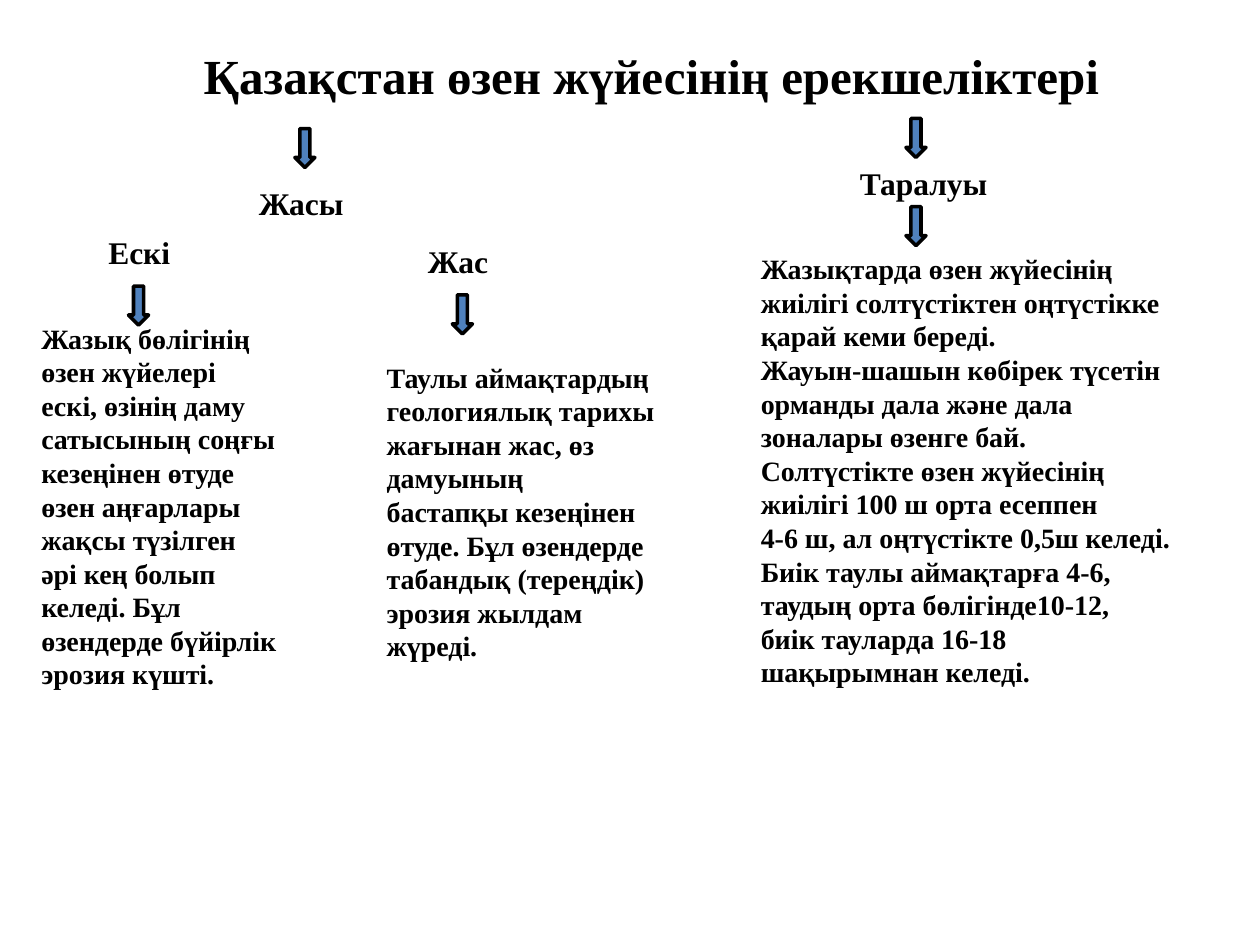
from dataclasses import dataclass

import pptx
import pptx.dml.color
import pptx.enum.shapes
import pptx.enum.text
import pptx.util
from pptx.util import Inches


@dataclass(frozen=True)
class Theme:
    font: str = "Times New Roman"
    ink: pptx.dml.color.RGBColor = pptx.dml.color.RGBColor(0, 0, 0)
    arrow_fill: pptx.dml.color.RGBColor = pptx.dml.color.RGBColor(0x4F, 0x81, 0xBD)
    title_size: int = 28
    heading_size: int = 18
    body_size: int = 16
    arrow_line: int = 2


@dataclass(frozen=True)
class Heading:
    text: str
    left: float
    top: float
    width: float
    wraps: bool = True


@dataclass(frozen=True)
class Description:
    left: float
    top: float
    width: float
    height: float
    lines: tuple[str, ...]


@dataclass(frozen=True)
class Arrow:
    left: float
    top: float


THEME = Theme()
ALIGN = pptx.enum.text.PP_ALIGN
HEADING_HEIGHT = 0.4
ARROW_WIDTH, ARROW_HEIGHT = 0.16, 0.31

HEADINGS = (
    Heading("Ескі", 0.55, 1.8, 1.11),
    Heading("Жас", 3.05, 1.87, 1.17),
    Heading("Таралуы", 6.72, 1.25, 1.22, wraps=False),
    Heading("Жасы", 1.95, 1.41, 0.88, wraps=False),
)

DESCRIPTIONS = (
    Description(0.23, 2.5, 2.34, 3.04, (
        "Жазық бөлігінің",
        "өзен жүйелері",
        "ескі, өзінің даму",
        "сатысының соңғы",
        "кезеңінен өтуде",
        "өзен аңғарлары",
        "жақсы түзілген",
        "әрі кең болып",
        "келеді. Бұл",
        "өзендерде бүйірлік",
        "эрозия күшті.",
    )),
    Description(2.97, 2.81, 2.42, 2.52, (
        "Таулы аймақтардың",
        "геологиялық тарихы жағынан жас, өз дамуының",
        "бастапқы кезеңінен",
        "өтуде. Бұл өзендерде табандық (тереңдік)",
        "эрозия жылдам",
        "жүреді.",
    )),
    Description(5.94, 1.95, 3.83, 3.6, (
        "Жазықтарда өзен жүйесінің",
        "жиілігі солтүстіктен оңтүстікке",
        "қарай кеми береді.",
        "Жауын-шашын көбірек түсетін",
        "орманды дала және дала",
        "зоналары өзенге бай.",
        "Солтүстікте өзен жүйесінің",
        "жиілігі 100 ш орта есеппен",
        "4-6 ш, ал оңтүстікте 0,5ш келеді.",
        "Биік таулы аймақтарға 4-6,",
        "таудың орта бөлігінде10-12,",
        "биік тауларда 16-18",
        "шақырымнан келеді.",
    )),
)

ARROWS = (
    Arrow(1.02, 2.27),
    Arrow(3.59, 2.34),
    Arrow(2.34, 1.02),
    Arrow(7.19, 1.64),
    Arrow(7.19, 0.94),
)


def write_lines(frame, lines: tuple[str, ...], size: int, alignment, wraps: bool) -> None:
    frame.text = "\n".join(lines)
    frame.word_wrap = wraps
    frame.auto_size = pptx.enum.text.MSO_AUTO_SIZE.NONE
    for paragraph in frame.paragraphs:
        paragraph.alignment = alignment
        paragraph.font.name = THEME.font
        paragraph.font.size = pptx.util.Pt(size)
        paragraph.font.bold = True
        paragraph.font.color.rgb = THEME.ink


def add_title(slide, text: str) -> None:
    title = slide.shapes.title
    title.left, title.top = Inches(1.48), Inches(0.31)
    title.width, title.height = Inches(7.38), Inches(0.57)
    write_lines(title.text_frame, (text,), THEME.title_size, ALIGN.CENTER, False)


def add_heading(slide, heading: Heading) -> None:
    label = slide.shapes.add_textbox(
        Inches(heading.left), Inches(heading.top),
        Inches(heading.width), Inches(HEADING_HEIGHT))
    write_lines(label.text_frame, (heading.text,), THEME.heading_size,
                ALIGN.CENTER, heading.wraps)


def add_description(slide, description: Description) -> None:
    column = slide.shapes.add_textbox(
        Inches(description.left), Inches(description.top),
        Inches(description.width), Inches(description.height))
    write_lines(column.text_frame, description.lines, THEME.body_size,
                ALIGN.LEFT, True)


def add_arrow(slide, arrow: Arrow) -> None:
    pointer = slide.shapes.add_shape(
        pptx.enum.shapes.MSO_SHAPE.DOWN_ARROW,
        Inches(arrow.left), Inches(arrow.top),
        Inches(ARROW_WIDTH), Inches(ARROW_HEIGHT))
    pointer.shadow.inherit = False
    pointer.fill.solid()
    pointer.fill.fore_color.rgb = THEME.arrow_fill
    pointer.line.color.rgb = THEME.ink
    pointer.line.width = pptx.util.Pt(THEME.arrow_line)


def main() -> None:
    deck = pptx.Presentation()
    deck.slide_width, deck.slide_height = Inches(10), Inches(7.5)
    slide = deck.slides.add_slide(deck.slide_layouts.get_by_name("Title Only"))
    add_title(slide, "Қазақстан өзен жүйесінің ерекшеліктері")
    for heading in HEADINGS:
        add_heading(slide, heading)
    for description in DESCRIPTIONS:
        add_description(slide, description)
    for arrow in ARROWS:
        add_arrow(slide, arrow)
    deck.save("out.pptx")


if __name__ == "__main__":
    main()
